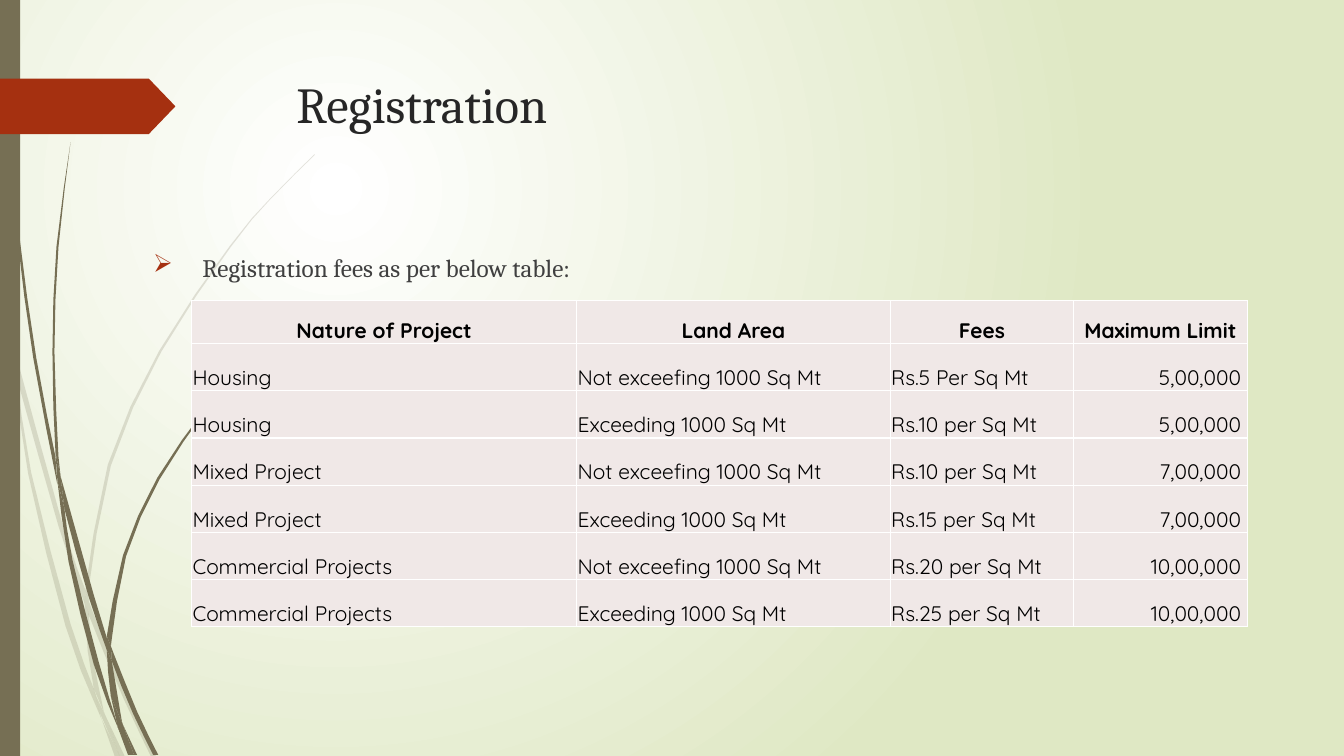
import math
from dataclasses import dataclass
from pptx import Presentation, util as u
from pptx.dml.color import RGBColor
from pptx.enum import shapes, text
from pptx.oxml import parse_xml
from pptx.oxml.ns import nsdecls, qn

COLOURS = {"olive": "766F54", "rust": "A53010", "title": "262626", "body": "404040",
           "ink": "000000", "cell": "F0E8E7", "white": "FFFFFF", "sage": "DFE8C4"}
GRID_COLUMNS, GRID_ROWS = 1333, 750
UNIT = u.Inches(0.01)
LONG_SPAN = 45
Point = tuple[float, float]


@dataclass(frozen=True)
class Area:
    left: float
    top: float
    width: float
    height: float

    def emu(self) -> list[int]:
        return [int(v * UNIT) for v in (self.left, self.top, self.width, self.height)]


@dataclass(frozen=True)
class Blade:
    near: list[Point]
    far: list[Point]


@dataclass(frozen=True)
class Fee:
    project: str
    land: str
    rate: str
    limit: str


PALE_BLADES = [
    Blade([(11, 350), (9, 322), (0, 282)], [(0, 299), (10, 344)]),
    Blade([(17, 376), (58, 522), (84, 599)], [(85, 586), (62, 520), (14, 345)]),
    Blade([(88, 596), (88, 610), (123, 694), (150, 751)], [(155, 751), (127, 692), (92, 607)]),
    Blade([(105, 711), (119, 751)], [(124, 751)]),
    Blade([(11, 350), (28, 470), (65, 621), (92, 693), (101, 714)],
          [(99, 707), (93, 683), (70, 619), (31, 469), (17, 376)]),
    Blade([(84, 599), (87, 646), (93, 683), (105, 711)], [(103, 706), (91, 646), (88, 608)]),
    Blade([(312, 153), (268, 197), (228, 244), (158, 348), (107, 461), (85, 584), (85, 586)],
          [(88, 596), (88, 584), (110, 462), (160, 349), (229, 245), (268, 198), (312, 154)]),
    Blade([(101, 714), (114, 751)], [(119, 751)]),
    Blade([(85, 586), (84, 599), (88, 608)], [(88, 610), (88, 596)]),
    Blade([(93, 683), (99, 707), (119, 751)], [(105, 711), (96, 692)]),
]
DARK_BLADES = [
    Blade([(3, 0), (7, 110), (17, 233), (33, 355), (57, 481)],
          [(55, 453), (36, 355), (19, 232), (8, 109), (4, 0)]),
    Blade([(60, 472), (64, 505), (88, 592), (106, 645)], [(106, 633), (93, 590)]),
    Blade([(110, 641), (111, 656), (132, 708), (152, 749)], [(157, 749), (136, 706), (113, 649)]),
    Blade([(57, 477), (68, 557), (93, 659), (117, 722)],
          [(116, 717), (98, 657), (72, 556), (64, 505)]),
    Blade([(70, 141), (56, 245), (52, 349), (55, 449), (60, 472)],
          [(58, 453), (54, 349), (58, 245), (70, 141)]),
    Blade([(122, 719), (133, 749)], [(136, 749)]),
    Blade([(55, 449), (57, 477), (64, 505)], [(60, 472)]),
    Blade([(260, 344), (231, 373), (204, 405), (156, 474), (122, 551), (106, 631)],
          [(110, 641), (111, 633), (125, 552), (158, 476), (205, 406), (231, 374), (261, 344)]),
    Blade([(117, 722), (127, 749)], [(131, 749)]),
    Blade([(106, 645), (110, 691), (122, 719)], [(121, 716), (111, 656)]),
    Blade([(106, 631), (106, 645), (111, 656)], [(110, 641)]),
    Blade([(110, 691), (117, 722), (130, 749)], [(133, 749), (122, 719)]),
]
SMALL_LAND, LARGE_LAND = "Not exceefing 1000 Sq Mt", "Exceeding 1000 Sq Mt"
HEADINGS = Fee("Nature of Project", "Land Area", "Fees", "Maximum Limit")
FEES = [
    Fee("Housing", SMALL_LAND, "Rs.5 Per Sq Mt", "5,00,000"),
    Fee("Housing", LARGE_LAND, "Rs.10 per Sq Mt", "5,00,000"),
    Fee("Mixed Project", SMALL_LAND, "Rs.10 per Sq Mt", "7,00,000"),
    Fee("Mixed Project", LARGE_LAND, "Rs.15 per Sq Mt", "7,00,000"),
    Fee("Commercial Projects", SMALL_LAND, "Rs.20 per Sq Mt", "10,00,000"),
    Fee("Commercial Projects", LARGE_LAND, "Rs.25 per Sq Mt", "10,00,000"),
]
TITLE_FONT = {"name": "Cambria", "size": u.Pt(36), "bold": False}
LEAD_FONT = {"name": "Cambria", "size": u.Pt(18), "bold": False}
TABLE_FONT = {"name": "Quicksand", "size": u.Pt(15)}
FRAME_FORMAT = {"word_wrap": True, "vertical_anchor": text.MSO_ANCHOR.TOP,
                "auto_size": text.MSO_AUTO_SIZE.NONE}
CELL_FORMAT = {"vertical_anchor": text.MSO_ANCHOR.BOTTOM, "margin_left": UNIT,
               "margin_right": UNIT, "margin_top": UNIT, "margin_bottom": 0}


def apply(target, values: dict) -> None:
    for attribute, value in values.items():
        setattr(target, attribute, value)


def write(paragraph, words: str, font: dict, colour: str, alignment=text.PP_ALIGN.LEFT) -> None:
    run = paragraph.add_run()
    run.text = words
    apply(run.font, font)
    run.font.color.rgb = RGBColor.from_string(COLOURS[colour])
    paragraph.alignment = alignment


def paint(shape, colour: str) -> None:
    shape.shadow.inherit = False
    shape.fill.solid()
    shape.fill.fore_color.rgb = RGBColor.from_string(COLOURS[colour])
    shape.line.fill.background()


def smooth(edge: list[Point]) -> list[Point]:
    padded = [edge[0], *edge, edge[-1]]
    curve = [edge[0]]
    for a, b, c, d in zip(padded, padded[1:], padded[2:], padded[3:]):
        if math.dist(b, c) > LONG_SPAN:
            curve.append(tuple((9 * (q + r) - p - s) / 16 for p, q, r, s in zip(a, b, c, d)))
        curve.append(c)
    return curve


def draw_blade(slide, blade: Blade, opacity: int) -> None:
    outline = [(x * UNIT, y * UNIT) for x, y in smooth(blade.near) + smooth(blade.far)]
    builder = slide.shapes.build_freeform(*outline[0], scale=1.0)
    builder.add_line_segments(outline[1:], close=True)
    stalk = builder.convert_to_shape()
    paint(stalk, "olive")
    if opacity < 100:
        tint = stalk.element.spPr.find(".//" + qn("a:srgbClr"))
        tint.append(parse_xml(f'<a:alpha {nsdecls("a")} val="{opacity * 1000}"/>'))


def draw_background(slide) -> None:
    slide.element.cSld.insert(0, parse_xml(
        f'<p:bg {nsdecls("p", "a")}><p:bgPr><a:gradFill rotWithShape="1"><a:gsLst>'
        f'<a:gs pos="0"><a:srgbClr val="{COLOURS["white"]}"/></a:gs>'
        f'<a:gs pos="100000"><a:srgbClr val="{COLOURS["sage"]}"/></a:gs></a:gsLst>'
        '<a:path path="circle"><a:fillToRect l="50000" t="50000" r="100000" b="100000"/></a:path>'
        '</a:gradFill><a:effectLst/></p:bgPr></p:bg>'))


def draw_title(slide) -> None:
    title = slide.shapes.title
    apply(title, dict(zip(("left", "top", "width", "height"), Area(284, 68, 975, 89).emu())))
    apply(title.text_frame, FRAME_FORMAT)
    write(title.text_frame.paragraphs[0], "Registration", TITLE_FONT, "title")


def draw_lead(slide) -> None:
    frame = slide.shapes.add_textbox(*Area(142, 245, 1094, 413).emu()).text_frame
    apply(frame, FRAME_FORMAT)
    lead = frame.paragraphs[0]
    write(lead, "Registration fees as per below table:", LEAD_FONT, "body")
    properties = lead._p.get_or_add_pPr()
    apply_indent = {"marL": 49 * UNIT, "indent": -49 * UNIT}
    for attribute, length in apply_indent.items():
        properties.set(attribute, str(length))
    for bullet in (f'<a:buClr {nsdecls("a")}><a:srgbClr val="{COLOURS["rust"]}"/></a:buClr>',
                   f'<a:buChar {nsdecls("a")} char="➢"/>'):
        properties.append(parse_xml(bullet))


def draw_cell(cell, words: str, heading: bool, limit: bool) -> None:
    align = text.PP_ALIGN
    alignment = align.CENTER if heading else align.RIGHT if limit else align.LEFT
    apply(cell, CELL_FORMAT)
    if limit and not heading:
        cell.margin_right = 6 * UNIT
    write(cell.text_frame.paragraphs[0], words, TABLE_FONT | {"bold": heading}, "ink", alignment)
    cell.fill.solid()
    cell.fill.fore_color.rgb = RGBColor.from_string(COLOURS["cell"])
    for order, side in enumerate("LRTB"):
        cell._tc.get_or_add_tcPr().insert(order, parse_xml(
            f'<a:ln{side} {nsdecls("a")} w="{u.Pt(1)}"><a:solidFill>'
            f'<a:srgbClr val="{COLOURS["white"]}"/></a:solidFill></a:ln{side}>'))


def draw_fees(slide) -> None:
    widths, heights = (382, 311, 182, 172), [43] + [46.8] * len(FEES)
    area = Area(190, 298, sum(widths), sum(heights))
    fees = slide.shapes.add_table(len(heights), len(widths), *area.emu()).table
    apply(fees, {"first_row": False, "horz_banding": False})
    for column, width in zip(fees.columns, widths):
        column.width = width * UNIT
    for number, (row, height, fee) in enumerate(zip(fees.rows, heights, [HEADINGS, *FEES])):
        row.height = int(height * UNIT)
        for place, words in enumerate((fee.project, fee.land, fee.rate, fee.limit)):
            draw_cell(row.cells[place], words, number == 0, place == len(widths) - 1)


def main() -> None:
    deck = Presentation()
    apply(deck, {"slide_width": GRID_COLUMNS * UNIT, "slide_height": GRID_ROWS * UNIT})
    slide = deck.slides.add_slide(deck.slide_layouts[5])
    draw_background(slide)
    for blades, opacity in ((PALE_BLADES, 20), (DARK_BLADES, 100)):
        for blade in blades:
            draw_blade(slide, blade, opacity)
    preset = shapes.MSO_SHAPE
    paint(slide.shapes.add_shape(preset.RECTANGLE, *Area(0, 0, 20, GRID_ROWS).emu()), "olive")
    marker = slide.shapes.add_shape(preset.PENTAGON, *Area(0, 78, 174, 55).emu())
    marker.adjustments[0] = 0.48
    paint(marker, "rust")
    draw_title(slide)
    draw_lead(slide)
    draw_fees(slide)
    deck.save("out.pptx")


if __name__ == "__main__":
    main()
